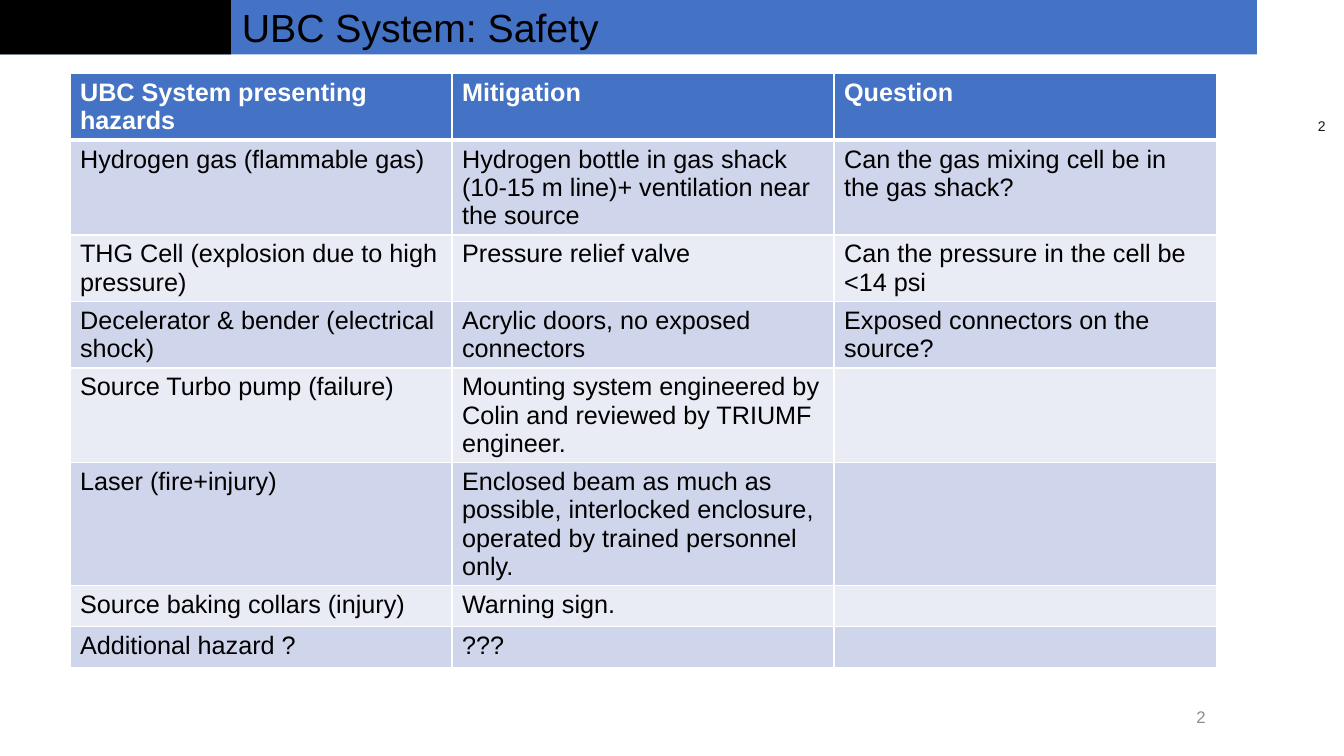
import pptx
import pptx.dml.color
import pptx.enum.shapes
import pptx.enum.text
import pptx.oxml
import pptx.oxml.ns
import pptx.util

Pt = pptx.util.Pt
ALIGN = pptx.enum.text.PP_ALIGN

BLUE, BLACK, WHITE = "4472C4", "000000", "FFFFFF"
BANDS = ("CFD5EA", "E9EBF5")
HAZARDS = [
    ("UBC System presenting hazards", "Mitigation", "Question"),
    ("Hydrogen gas (flammable gas)",
     "Hydrogen bottle in gas shack (10-15 m line)+ ventilation near the source",
     "Can the gas mixing cell be in the gas shack?"),
    ("THG Cell (explosion due to high pressure)", "Pressure relief valve",
     "Can the pressure in the cell be <14 psi"),
    ("Decelerator & bender (electrical shock)",
     "Acrylic doors, no exposed connectors",
     "Exposed connectors on the source?"),
    ("Source Turbo pump (failure)",
     "Mounting system engineered by Colin and reviewed by TRIUMF engineer.", ""),
    ("Laser (fire+injury)",
     "Enclosed beam as much as possible, interlocked enclosure, "
     "operated by trained personnel only.", ""),
    ("Source baking collars (injury)", "Warning sign.", ""),
    ("Additional hazard ?", "???", ""),
]


def rgb(color):
    return pptx.dml.color.RGBColor.from_string(color)


def set_attributes(target, values):
    for name, value in values.items():
        setattr(target, name, value)


def write(text_frame, text, size, color, bold=False, **paragraph_format):
    text_frame.text = text
    paragraph = text_frame.paragraphs[0]
    set_attributes(paragraph, paragraph_format)
    set_attributes(paragraph.font, {"name": "Arial", "size": Pt(size), "bold": bold})
    paragraph.font.color.rgb = rgb(color)


def place(shape, left, top, width, height):
    set_attributes(shape, {"left": Pt(left), "top": Pt(top),
                           "width": Pt(width), "height": Pt(height)})


def add_bar(slide, left, width, height, color):
    bar = slide.shapes.add_shape(pptx.enum.shapes.MSO_SHAPE.RECTANGLE,
                                 Pt(left), Pt(0), Pt(width), Pt(height))
    bar.shadow.inherit = False
    bar.fill.solid()
    bar.fill.fore_color.rgb = rgb(color)
    bar.line.fill.background()


def add_number(slide, left, top, width, height, size, color, margin_right):
    box = slide.shapes.add_textbox(Pt(left), Pt(top), Pt(width), Pt(height))
    set_attributes(box.text_frame, {
        "word_wrap": True, "margin_right": Pt(margin_right),
        "vertical_anchor": pptx.enum.text.MSO_ANCHOR.MIDDLE})
    write(box.text_frame, "2", size, color, alignment=ALIGN.RIGHT)


def set_title(slide, text):
    title = slide.shapes.title
    place(title, 165.6, -4.3, 664.6, 51.1)
    set_attributes(title.text_frame, {
        "word_wrap": True, "auto_size": pptx.enum.text.MSO_AUTO_SIZE.NONE,
        "vertical_anchor": pptx.enum.text.MSO_ANCHOR.MIDDLE})
    write(title.text_frame, text, 28, BLACK, alignment=ALIGN.LEFT, line_spacing=0.9)
    # Bring the title in front of the bars
    slide.shapes.element.append(title.element)


def set_borders(cell, widths):
    properties = cell._tc.get_or_add_tcPr()
    for index, (side, width) in enumerate(widths.items()):
        properties.insert(index, pptx.oxml.parse_xml(
            f'<a:ln{side} {pptx.oxml.ns.nsdecls("a")} w="{Pt(width)}">'
            f'<a:solidFill><a:srgbClr val="{WHITE}"/></a:solidFill></a:ln{side}>'))


def add_table(slide, rows, left, top, column_width, row_height):
    columns = len(rows[0])
    table = slide.shapes.add_table(
        len(rows), columns, Pt(left), Pt(top),
        Pt(column_width * columns), Pt(row_height * len(rows))).table
    for column in table.columns:
        column.width = Pt(column_width)
    for row_index, texts in enumerate(rows):
        header = row_index == 0
        fill = BLUE if header else BANDS[(row_index - 1) % 2]
        for column_index, text in enumerate(texts):
            cell = table.cell(row_index, column_index)
            cell.fill.solid()
            cell.fill.fore_color.rgb = rgb(fill)
            set_borders(cell, {"L": 1, "R": 1, "T": 3 if row_index == 1 else 1,
                               "B": 3 if header else 1})
            write(cell.text_frame, text, 18, WHITE if header else BLACK, bold=header)


def main():
    presentation = pptx.Presentation()
    set_attributes(presentation, {"slide_width": Pt(960), "slide_height": Pt(540)})
    slide = presentation.slides.add_slide(presentation.slide_layouts[5])

    # Header band and right margin
    add_bar(slide, 0, 960, 38.9, BLUE)
    add_bar(slide, 0, 165, 38.9, BLACK)
    add_bar(slide, 898, 62, 540, WHITE)

    # Slide numbers
    add_number(slide, 900, 77, 50.4, 25.2, 10, "181717", 3.6)
    add_number(slide, 652.3, 497.5, 216, 28.8, 12, "8C8C8C", 7.2)

    # Title and hazard table
    set_title(slide, "UBC System: Safety")
    add_table(slide, HAZARDS, 50, 52.6, 272.9, 29.2)

    presentation.save("out.pptx")


if __name__ == "__main__":
    main()
